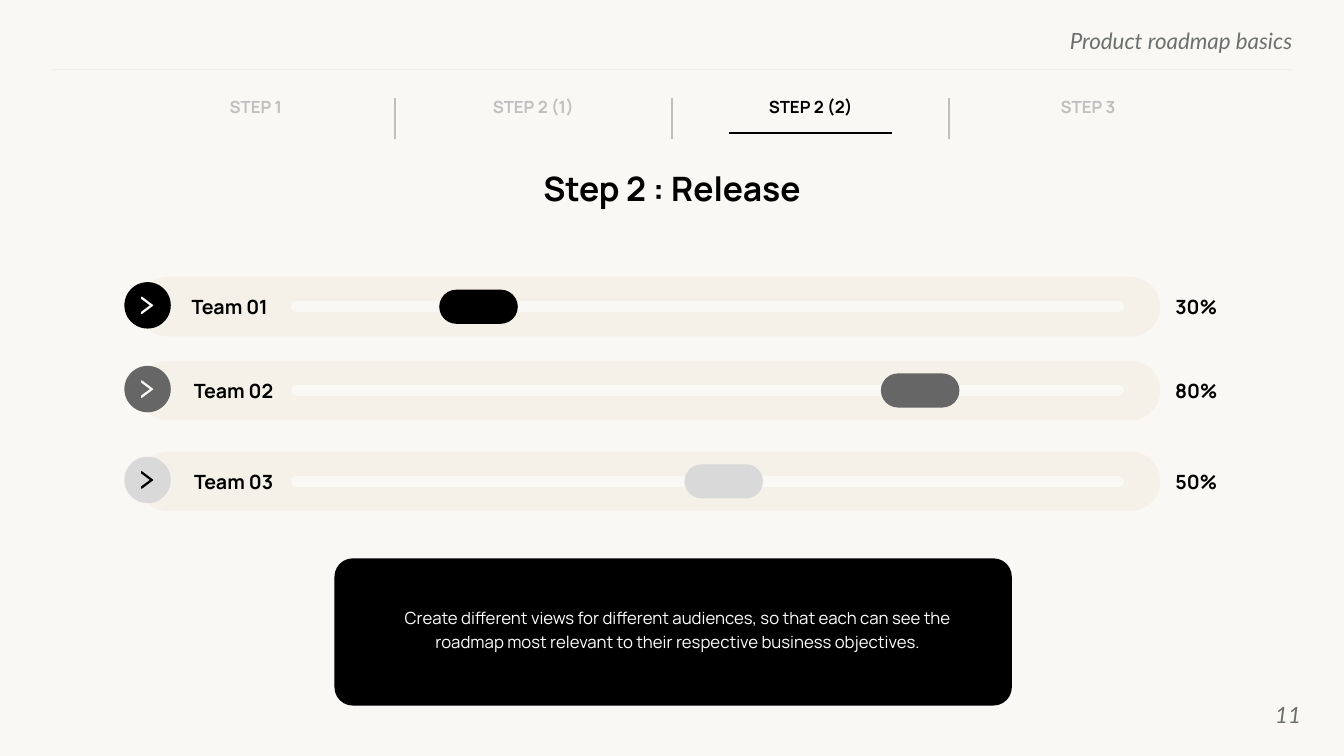
"""Build the release step slide of a product roadmap deck."""
from dataclasses import dataclass

from lxml import etree
from pptx import Presentation
from pptx.dml.color import RGBColor
from pptx.enum import shapes, text
from pptx.oxml import ns
from pptx.util import Cm, Pt

HEADER = "Product roadmap basics"
PAGE_NUMBER = "11"
STEPS = ["STEP 1", "STEP 2 (1)", "STEP 2 (2)", "STEP 3"]
CURRENT_STEP = 2
TITLE = "Step 2 : Release"
NOTE = ("Create different views for different audiences, so that each can see "
        "the roadmap most relevant to their respective business objectives.")
TEAMS = [
    dict(name="Team 01", share="30%", top=6.98, label=5.79, knob=12.06, fill="000000", arrow="F9F8F5"),
    dict(name="Team 02", share="80%", top=9.09, label=5.89, knob=23.19, fill="666666", arrow="F9F8F5"),
    dict(name="Team 03", share="50%", top=11.38, label=5.89, knob=18.24, fill="D9D9D9", arrow="000000"),
]
CHEVRON = [(-.15, .21), (-.15, .17), (.08, 0), (-.15, -.17), (-.15, -.21), (.13, 0)]


@dataclass(frozen=True)
class Theme:
    """Colours, fonts and type sizes."""
    paper: str = "F9F8F5"
    ink: str = "000000"
    white: str = "FFFFFF"
    bar: str = "F5F1E8"
    rule: str = "EFEFEF"
    muted: str = "BFBFBF"
    grey: str = "6C706F"
    body: str = "Manrope"
    accent: str = "Lato"
    small: int = 12
    label: int = 14
    header: int = 16
    title: int = 24


THEME = Theme()
WIDTH, HEIGHT = 33.87, 19.05
MIDDLE = WIDTH / 2
STEP_PITCH = 6.99
STEP_WIDTH = 3.3
BAR_LEFT, BAR_WIDTH, BAR_HEIGHT = 3.48, 25.76, 1.5
BADGE_X, BADGE_SIZE = 3.72, 1.17
TRACK = 7.47, 28.19
KNOB_WIDTH, KNOB_HEIGHT = 1.98, .86
SHARE_X = 30.15


def colour(code):
    """Turn a hex code into a colour."""
    return RGBColor.from_string(code)


def add_text(page, words, left, top, width, height, *, size=THEME.small, font=THEME.body,
             ink=THEME.ink, bold=False, italic=False, align=text.PP_ALIGN.CENTER,
             anchor=text.MSO_ANCHOR.MIDDLE, spacing=1.0):
    """Add a text box without margins."""
    box = page.shapes.add_textbox(Cm(left), Cm(top), Cm(width), Cm(height))
    frame = box.text_frame
    frame.word_wrap = True
    frame.vertical_anchor = anchor
    frame.margin_left = frame.margin_right = frame.margin_top = frame.margin_bottom = 0
    para = frame.paragraphs[0]
    para.alignment = align
    para.line_spacing = spacing
    span = para.add_run()
    span.text = words
    span.font.size, span.font.name = Pt(size), font
    span.font.bold, span.font.italic = bold, italic
    span.font.color.rgb = colour(ink)


def add_block(page, kind, left, top, width, height, fill, corner=None):
    """Add a plain filled shape."""
    block = page.shapes.add_shape(kind, Cm(left), Cm(top), Cm(width), Cm(height))
    block.shadow.inherit = False
    block.fill.solid()
    block.fill.fore_color.rgb = colour(fill)
    block.line.fill.background()
    if corner is not None:
        block.adjustments[0] = corner


def add_line(page, x1, y1, x2, y2, ink, weight, cap="flat"):
    """Add a straight line."""
    line = page.shapes.add_connector(shapes.MSO_CONNECTOR.STRAIGHT, Cm(x1), Cm(y1), Cm(x2), Cm(y2))
    line.line.color.rgb = colour(ink)
    line.line.width = Pt(weight)
    line.line._get_or_add_ln().set("cap", cap)
    etree.SubElement(line._element.spPr, ns.qn("a:effectLst"))


def add_chevron(page, x, y, fill, ink):
    """Draw the chevron of a team badge around its centre."""
    points = [(Cm(x + dx), Cm(y + dy)) for dx, dy in CHEVRON]
    builder = page.shapes.build_freeform(*points[0])
    builder.add_line_segments(points[1:], close=True)
    chevron = builder.convert_to_shape()
    chevron.shadow.inherit = False
    chevron.fill.solid()
    chevron.fill.fore_color.rgb = colour(fill)
    chevron.line.color.rgb = colour(ink)
    chevron.line.width = Pt(.75)


def add_frame(page):
    """Add header, rule and page number."""
    style = dict(size=THEME.header, font=THEME.accent, ink=THEME.grey, italic=True,
                 align=text.PP_ALIGN.RIGHT)
    add_text(page, HEADER, 19.51, .69, 13.06, .61, anchor=text.MSO_ANCHOR.TOP, **style)
    add_line(page, 1.32, 1.75, 32.56, 1.75, THEME.rule, .75)
    add_text(page, PAGE_NUMBER, 30.76, 17.27, 2.03, 1.45, **style)


def add_steps(page):
    """Add the step names, the dividers and the mark of the current step."""
    for index, step in enumerate(STEPS):
        centre = MIDDLE + (index - (len(STEPS) - 1) / 2) * STEP_PITCH
        current = index == CURRENT_STEP
        add_text(page, step, centre - STEP_WIDTH / 2, 2.31, STEP_WIDTH, .76, bold=True,
                 ink=THEME.ink if current else THEME.muted)
        if current:
            add_line(page, centre - 2.06, 3.35, centre + 2.06, 3.35, THEME.ink, 1.5)
        if index:
            edge = centre - STEP_PITCH / 2
            add_line(page, edge, 2.46, edge, 3.51, THEME.muted, 1.5)


def add_team(page, team):
    """Add one team's progress row."""
    kind = shapes.MSO_SHAPE
    top, fill = team["top"], team["fill"]
    middle = top + BAR_HEIGHT / 2
    badge_y = top + .13 + BADGE_SIZE / 2
    add_block(page, kind.ROUNDED_RECTANGLE, BAR_LEFT, top, BAR_WIDTH, BAR_HEIGHT, THEME.bar, .5)
    add_block(page, kind.OVAL, BADGE_X - BADGE_SIZE / 2, badge_y - BADGE_SIZE / 2,
              BADGE_SIZE, BADGE_SIZE, fill)
    add_chevron(page, BADGE_X, badge_y, fill, team["arrow"])
    add_line(page, TRACK[0], middle, TRACK[1], middle, THEME.paper, 8, cap="rnd")
    add_block(page, kind.ROUNDED_RECTANGLE, team["knob"] - KNOB_WIDTH / 2,
              middle - KNOB_HEIGHT / 2, KNOB_WIDTH, KNOB_HEIGHT, fill, .5)
    for words, centre in ((team["name"], team["label"]), (team["share"], SHARE_X)):
        add_text(page, words, centre - 1.3, middle - .43, 2.6, .86, size=THEME.label, bold=True)


def main():
    """Build and save the deck."""
    deck = Presentation()
    deck.slide_width, deck.slide_height = Cm(WIDTH), Cm(HEIGHT)
    page = deck.slides.add_slide(deck.slide_layouts[6])
    page.background.fill.solid()
    page.background.fill.fore_color.rgb = colour(THEME.paper)
    add_frame(page)
    add_steps(page)
    add_text(page, TITLE, MIDDLE - 4.21, 4.24, 8.42, 1.02, size=THEME.title, bold=True,
             anchor=text.MSO_ANCHOR.TOP)
    for team in TEAMS:
        add_team(page, team)
    add_block(page, shapes.MSO_SHAPE.ROUNDED_RECTANGLE, 8.43, 14.07, 17.07, 3.71, THEME.ink, .124)
    add_text(page, NOTE, 9.4, 15.06, 15.37, 1.55, ink=THEME.white, spacing=1.15)
    deck.save("out.pptx")


if __name__ == "__main__":
    main()
